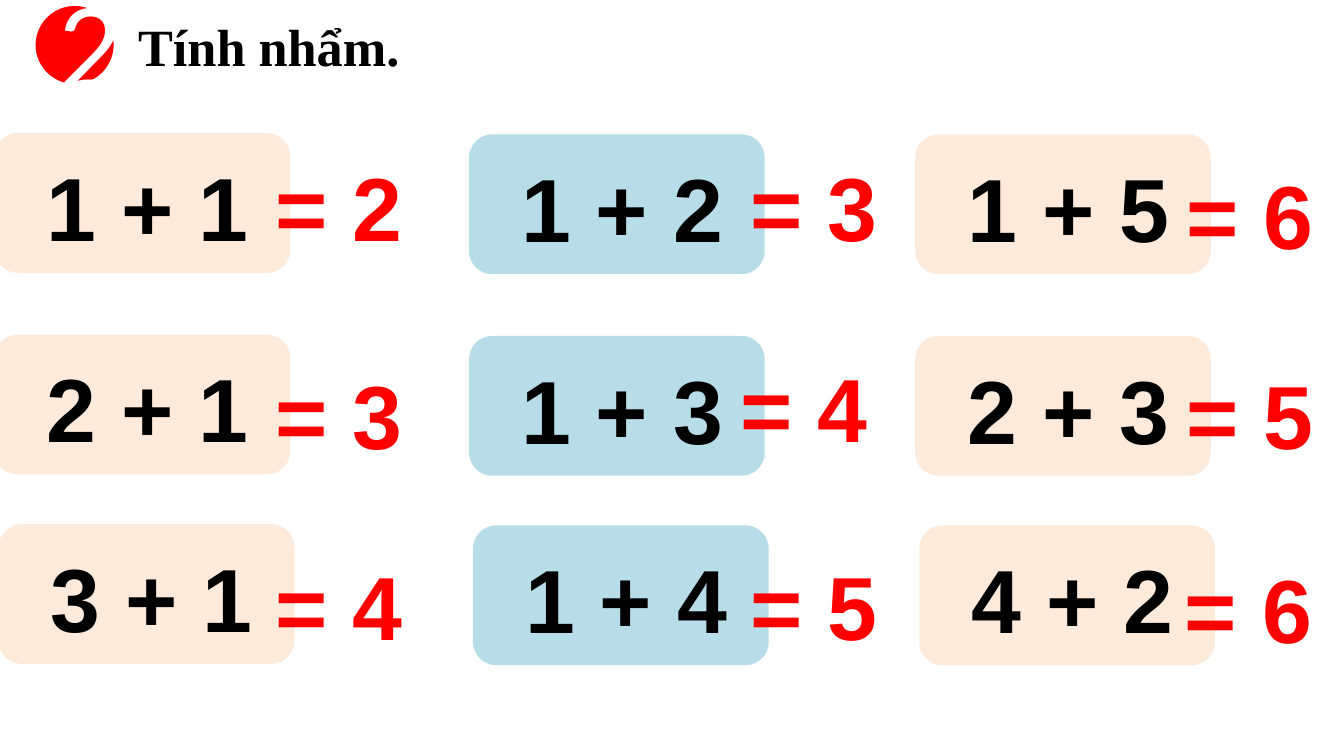
from dataclasses import dataclass

from pptx import Presentation
from pptx.dml.color import RGBColor
from pptx.enum.shapes import MSO_SHAPE
from pptx.enum.text import MSO_ANCHOR, PP_ALIGN
from pptx.util import Inches, Pt

ELLIPSE = MSO_SHAPE.OVAL
ROUNDED = MSO_SHAPE.ROUNDED_RECTANGLE
LEFT, CENTER = PP_ALIGN.LEFT, PP_ALIGN.CENTER
MIDDLE = MSO_ANCHOR.MIDDLE

RED, BLACK, WHITE = "FF0000", "000000", "FFFFFF"
PEACH, BLUE = "FDEADA", "B7DEE8"
CARD_WIDTH, CARD_HEIGHT = 2.2, 1.04
TEXT_WIDTH, TEXT_HEIGHT = 1.96, 0.42


@dataclass
class Column:
    left: float
    drop: float
    fill: str


@dataclass
class Row:
    top: float
    shift: float


@dataclass
class Sum:
    question: str
    answer: str
    answer_left: float
    answer_top: float


COLUMNS = [Column(-0.04, 0, PEACH), Column(3.49, 0.01, BLUE), Column(6.81, 0.01, PEACH)]
ROWS = [Row(0.99, 0), Row(2.49, 0), Row(3.9, 0.03)]

# One list for each row of cards
SUMS = [
    [Sum("1 + 1", "= 2", 1.54, 1.08), Sum("1 + 2", "= 3", 5.08, 1.08),
     Sum("1 + 5", "= 6", 8.32, 1.14)],
    [Sum("2 + 1", "= 3", 1.54, 2.63), Sum("1 + 3", "= 4", 5, 2.58),
     Sum("2 + 3", "= 5", 8.32, 2.63)],
    [Sum("3 + 1", "= 4", 1.54, 4.05), Sum("1 + 4", "= 5", 5.08, 4.05),
     Sum("4 + 2", "= 6", 8.31, 4.07)],
]


def color(value: str) -> RGBColor:
    return RGBColor.from_string(value)


def write(shape, text: str, size: float, font: str, ink: str, align, bold: bool = True) -> None:
    paragraph = shape.text_frame.paragraphs[0]
    paragraph.text = text
    paragraph.alignment = align
    paragraph.font.size = Pt(size)
    paragraph.font.name = font
    paragraph.font.bold = bold
    paragraph.font.color.rgb = color(ink)


def add_filled(slide, kind, left: float, top: float, width: float, height: float, fill: str):
    shape = slide.shapes.add_shape(kind, Inches(left), Inches(top), Inches(width), Inches(height))
    shape.shadow.inherit = False
    shape.fill.solid()
    shape.fill.fore_color.rgb = color(fill)
    shape.line.fill.background()
    return shape


def add_text_box(slide, left: float, top: float, width: float, height: float):
    box = slide.shapes.add_textbox(Inches(left), Inches(top), Inches(width), Inches(height))
    box.text_frame.word_wrap = True
    return box


def add_expression(slide, text: str, left: float, top: float, ink: str) -> None:
    box = add_text_box(slide, left, top, TEXT_WIDTH, TEXT_HEIGHT)
    write(box, text, 48, "Arial", ink, CENTER)


def add_heading(slide) -> None:
    badge = add_filled(slide, ELLIPSE, 0.25, 0.03, 0.61, 0.61, RED)
    badge.line.color.rgb = color(WHITE)
    badge.line.width = Pt(2)
    badge.text_frame.vertical_anchor = MIDDLE
    write(badge, "2", 60, "Lato", WHITE, CENTER, bold=False)
    title = add_text_box(slide, 0.93, 0.06, 2.49, 0.57)
    write(title, "Tính nhẩm.", 28, "Times New Roman", BLACK, LEFT)


def main() -> None:
    # A 16:9 slide
    presentation = Presentation()
    presentation.slide_width = Inches(10)
    presentation.slide_height = Inches(10 * 9 / 16)
    slide = presentation.slides.add_slide(presentation.slide_layouts[6])

    add_heading(slide)

    # Cards with the questions
    for row, sums in zip(ROWS, SUMS):
        for column, item in zip(COLUMNS, sums):
            left, top = column.left + row.shift, row.top + column.drop
            add_filled(slide, ROUNDED, left, top, CARD_WIDTH, CARD_HEIGHT, column.fill)
            add_expression(slide, item.question, left + 0.16, top + 0.09, BLACK)

    # Answers over the cards
    for sums in SUMS:
        for item in sums:
            add_expression(slide, item.answer, item.answer_left, item.answer_top, RED)

    presentation.save("out.pptx")


if __name__ == "__main__":
    main()
